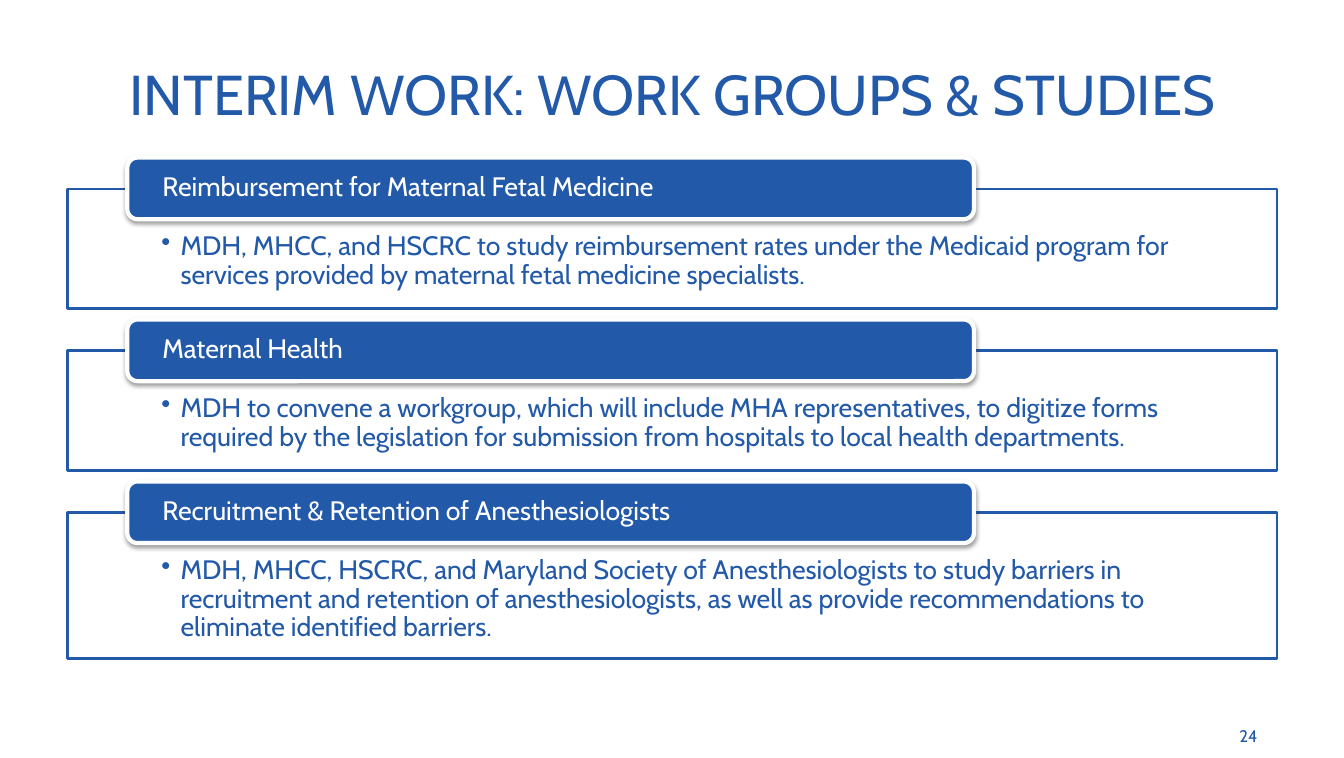
from dataclasses import dataclass

from lxml import etree
from pptx import Presentation
from pptx.dml.color import RGBColor
from pptx.enum.shapes import MSO_SHAPE
from pptx.enum.text import MSO_ANCHOR, PP_ALIGN
from pptx.oxml.ns import qn
from pptx.util import Cm, Pt

RECTANGLE = MSO_SHAPE.RECTANGLE
ROUNDED = MSO_SHAPE.ROUNDED_RECTANGLE
TOP, MIDDLE = MSO_ANCHOR.TOP, MSO_ANCHOR.MIDDLE
LEFT, CENTER, RIGHT = PP_ALIGN.LEFT, PP_ALIGN.CENTER, PP_ALIGN.RIGHT

TITLE = "INTERIM WORK: WORK GROUPS & STUDIES"
PAGE_NUMBER = "24"
STUDIES = [
    ("Reimbursement for Maternal Fetal Medicine",
     "MDH, MHCC, and HSCRC to study reimbursement rates under the Medicaid program for "
     "services provided by maternal fetal medicine specialists.", 2),
    ("Maternal Health",
     "MDH to convene a workgroup, which will include MHA representatives, to digitize forms "
     "required by the legislation for submission from hospitals to local health departments.", 2),
    ("Recruitment & Retention of Anesthesiologists",
     "MDH, MHCC, HSCRC, and Maryland Society of Anesthesiologists to study barriers in "
     "recruitment and retention of anesthesiologists, as well as provide recommendations to "
     "eliminate identified barriers.", 3),
]


@dataclass(frozen=True)
class Theme:
    font: str = "Cabin"
    blue: RGBColor = RGBColor(0x23, 0x59, 0xA9)
    white: RGBColor = RGBColor(0xFF, 0xFF, 0xFF)
    title_size: int = 40
    body_size: int = 19
    page_size: int = 12


THEME = Theme()

MARGIN, CONTENT_WIDTH = 1.7, 30.4
FIRST_TOP, BOX_GAP = 4.75, 1.07
BOX_PADDING, LINE_HEIGHT = 1.68, 0.66
LABEL_LEFT, LABEL_WIDTH, LABEL_HEIGHT, LABEL_RISE = 3.2, 21.28, 1.55, 0.79
HANGING_INDENT = 0.48


def write(shape, text, size, color, alignment, anchor, insets=(0.25, 0.13, 0.25, 0.13)):
    frame = shape.text_frame
    frame.text = text
    frame.word_wrap = True
    frame.vertical_anchor = anchor
    (frame.margin_left, frame.margin_top,
     frame.margin_right, frame.margin_bottom) = map(Cm, insets)
    paragraph = frame.paragraphs[0]
    paragraph.alignment = alignment
    font = paragraph.runs[0].font
    font.name, font.size, font.color.rgb = THEME.font, Pt(size), color
    return paragraph


def add_panel(slide, kind, position, fill, line, line_width):
    shape = slide.shapes.add_shape(kind, *map(Cm, position))
    shape.shadow.inherit = False
    shape.fill.solid()
    shape.fill.fore_color.rgb = fill
    shape.line.color.rgb = line
    shape.line.width = Pt(line_width)
    return shape


def add_bullet(paragraph):
    properties = paragraph._p.get_or_add_pPr()
    properties.set("marL", str(Cm(HANGING_INDENT)))
    properties.set("indent", str(-Cm(HANGING_INDENT)))
    etree.SubElement(properties, qn("a:buChar"), char="•")


def add_drop_shadow(shape):
    effects = shape._element.spPr.find(qn("a:effectLst"))
    shadow = etree.SubElement(effects, qn("a:outerShdw"), blurRad=str(Pt(3.1)),
                              dist=str(Pt(1.6)), dir="5400000", rotWithShape="0")
    color = etree.SubElement(shadow, qn("a:srgbClr"), val="000000")
    etree.SubElement(color, qn("a:alpha"), val="38000")


def add_study(slide, heading, description, top, height):
    box = add_panel(slide, RECTANGLE, (MARGIN, top, CONTENT_WIDTH, height),
                    THEME.white, THEME.blue, 2)
    paragraph = write(box, description, THEME.body_size, THEME.blue, LEFT, TOP,
                      (2.36, 1.09, 2.36, 0.38))
    paragraph.line_spacing = 0.9
    add_bullet(paragraph)

    label = add_panel(slide, ROUNDED,
                      (LABEL_LEFT, top - LABEL_RISE, LABEL_WIDTH, LABEL_HEIGHT),
                      THEME.blue, THEME.white, 3)
    add_drop_shadow(label)
    paragraph = write(label, heading, THEME.body_size, THEME.white, LEFT, MIDDLE,
                      (0.81, 0, 0.81, 0))
    paragraph.line_spacing = 0.9


def main():
    presentation = Presentation()
    presentation.slide_width, presentation.slide_height = Cm(33.78), Cm(19.05)
    slide = presentation.slides.add_slide(presentation.slide_layouts[5])

    title = slide.shapes.title
    title.left, title.top = Cm(MARGIN), Cm(0.76)
    title.width, title.height = Cm(CONTENT_WIDTH), Cm(3.18)
    write(title, TITLE, THEME.title_size, THEME.blue, CENTER, MIDDLE)

    top = FIRST_TOP
    for heading, description, line_count in STUDIES:
        height = BOX_PADDING + LINE_HEIGHT * line_count
        add_study(slide, heading, description, top, height)
        top += height + BOX_GAP

    page_number = slide.shapes.add_textbox(Cm(30.18), Cm(17.98), Cm(1.68), Cm(1.02))
    write(page_number, PAGE_NUMBER, THEME.page_size, THEME.blue, RIGHT, MIDDLE)

    presentation.save("out.pptx")


if __name__ == "__main__":
    main()
